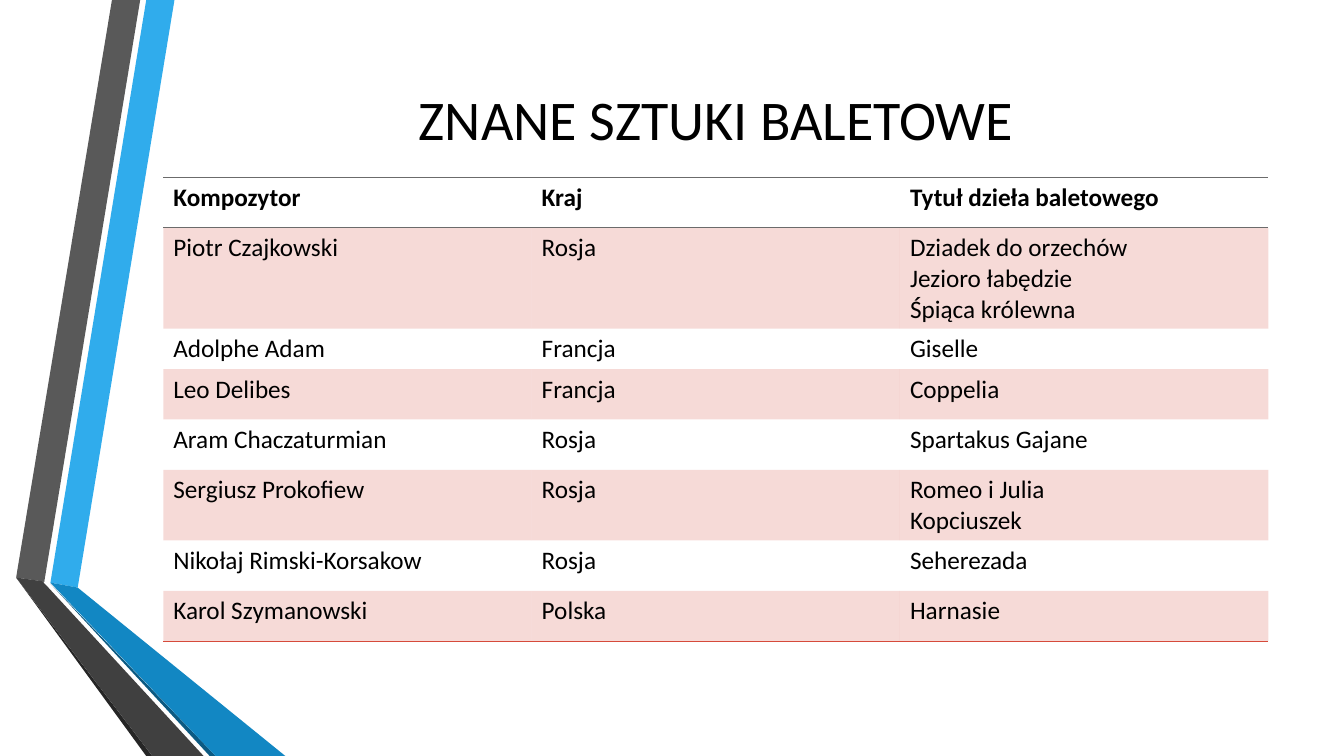
from dataclasses import dataclass

from lxml import etree
from pptx import Presentation
from pptx import util as u
from pptx.dml import color
from pptx.enum import text
from pptx.oxml import ns

WIDTH, HEIGHT = u.Inches(13.33), u.Inches(7.5)
FONT = "Calibri"
BLACK, RED, GREY = "000000", "D64A3B", "6B6B6B"
PLAIN_TABLE_STYLE = "{2D5ABB26-0587-4C30-8999-92F81FD0307C}"

# Lengths are percentages of the slide's width and height.
LEFT, SPAN = 12.15, 82.22
TITLE_TOP, TITLE_HEIGHT = 10, 11.2
TABLE_TOP, TABLE_HEIGHT = 23.47, 61.33
ROW_HEIGHTS = [6.67, 6.67, 5.33] + [6.67] * 5


@dataclass(frozen=True)
class Ribbon:
    fill: str
    points: tuple[tuple[float, float], ...]


@dataclass(frozen=True)
class Ballet:
    composer: str
    country: str
    titles: str


RIBBONS = [
    Ribbon("30ACEC", ((3.75, 77.07), (5.78, 77.73), (12.98, 0), (10.88, 0))),
    Ribbon("595959", ((10.43, 0), (8.33, 0), (1.2, 76.4), (3.3, 76.93))),
    Ribbon("262626", ((1.2, 76.4), (10.88, 100), (11.33, 100))),
    Ribbon("0C5A82", ((3.75, 77.2), (15.6, 100), (16.05, 100))),
    Ribbon("1287C3", ((3.75, 77.07), (16.05, 100), (21.23, 100), (5.78, 77.73))),
    Ribbon("404040", ((15.15, 100), (3.6, 77.73), (3.23, 77.07), (3.3, 76.93),
                      (1.2, 76.4), (11.33, 100))),
]

HEADER = Ballet("Kompozytor", "Kraj", "Tytuł dzieła baletowego")
BALLETS = [
    Ballet("Piotr Czajkowski", "Rosja",
           "Dziadek do orzechów\nJezioro łabędzie\nŚpiąca królewna"),
    Ballet("Adolphe Adam", "Francja", "Giselle"),
    Ballet("Leo Delibes", "Francja", "Coppelia"),
    Ballet("Aram Chaczaturmian", "Rosja", "Spartakus Gajane"),
    Ballet("Sergiusz Prokofiew", "Rosja", "Romeo i Julia\nKopciuszek"),
    Ballet("Nikołaj Rimski-Korsakow", "Rosja", "Seherezada"),
    Ballet("Karol Szymanowski", "Polska", "Harnasie"),
]


def across(share: float) -> int:
    return round(WIDTH * share / 100)


def down(share: float) -> int:
    return round(HEIGHT * share / 100)


def rgb(code: str) -> color.RGBColor:
    return color.RGBColor.from_string(code)


def write(frame, words: str, align=text.PP_ALIGN.LEFT, **format_values) -> None:
    """Fill a text frame, one paragraph for each line of words."""
    frame.text = words
    for para in frame.paragraphs:
        para.alignment = align
        for span in para.runs:
            span.font.color.rgb = rgb(BLACK)
            for name, value in {"name": FONT, **format_values}.items():
                setattr(span.font, name, value)


def draw_ribbon(page, ribbon: Ribbon) -> None:
    corners = [(across(x), down(y)) for x, y in ribbon.points]
    builder = page.shapes.build_freeform(*corners[0], scale=1.0)
    builder.add_line_segments(corners[1:], close=True)
    shape = builder.convert_to_shape()
    shape.shadow.inherit = False
    shape.fill.solid()
    shape.fill.fore_color.rgb = rgb(ribbon.fill)
    shape.line.fill.background()


def draw_title(page, words: str) -> None:
    box = page.shapes.add_textbox(
        across(LEFT), down(TITLE_TOP), across(SPAN), down(TITLE_HEIGHT))
    box.text_frame.word_wrap = True
    box.text_frame.vertical_anchor = text.MSO_ANCHOR.MIDDLE
    write(box.text_frame, words, text.PP_ALIGN.CENTER, size=u.Pt(40))


def tint(cell, code: str, percent: int) -> None:
    """Fill a cell with a partly transparent colour."""
    cell.fill.solid()
    cell.fill.fore_color.rgb = rgb(code)
    swatch = cell._tc.tcPr.find(".//" + ns.qn("a:srgbClr"))
    etree.SubElement(swatch, ns.qn("a:alpha"), val=str(percent * 1000))


def rule(cell, edge: str, code: str, points: float) -> None:
    """Draw a border on one edge of a cell, ahead of its fill in the XML."""
    properties = cell._tc.get_or_add_tcPr()
    line = etree.Element(ns.qn(f"a:{edge}"), w=str(u.Pt(points)))
    solid = etree.SubElement(line, ns.qn("a:solidFill"))
    etree.SubElement(solid, ns.qn("a:srgbClr"), val=code)
    borders = properties.findall(ns.qn("a:lnT"))
    properties.insert(len(borders), line)


def draw_table(page, ballets: list[Ballet]) -> None:
    rows = [HEADER, *ballets]
    holder = page.shapes.add_table(
        len(rows), 3, across(LEFT), down(TABLE_TOP), across(SPAN), down(TABLE_HEIGHT))
    table = holder.table
    table.first_row = table.horz_banding = False
    style = table._tbl.tblPr.find(ns.qn("a:tableStyleId"))
    style.text = PLAIN_TABLE_STYLE
    for row, height in zip(table.rows, ROW_HEIGHTS):
        row.height = down(height)
    holder.height = down(TABLE_HEIGHT)

    for index, ballet in enumerate(rows):
        values = (ballet.composer, ballet.country, ballet.titles)
        for cell, words in zip(table.rows[index].cells, values):
            write(cell.text_frame, words, size=u.Pt(18), bold=index == 0)
            if index % 2:
                tint(cell, RED, 20)
            else:
                cell.fill.background()
            if index == 0:
                rule(cell, "lnT", GREY, 1)
                rule(cell, "lnB", GREY, 1)
            if index == len(rows) - 1:
                rule(cell, "lnB", RED, 1)


def main() -> None:
    deck = Presentation()
    deck.slide_width, deck.slide_height = WIDTH, HEIGHT
    page = deck.slides.add_slide(deck.slide_layouts[6])
    for ribbon in RIBBONS:
        draw_ribbon(page, ribbon)
    draw_title(page, "ZNANE SZTUKI BALETOWE")
    draw_table(page, BALLETS)
    deck.save("out.pptx")


if __name__ == "__main__":
    main()
